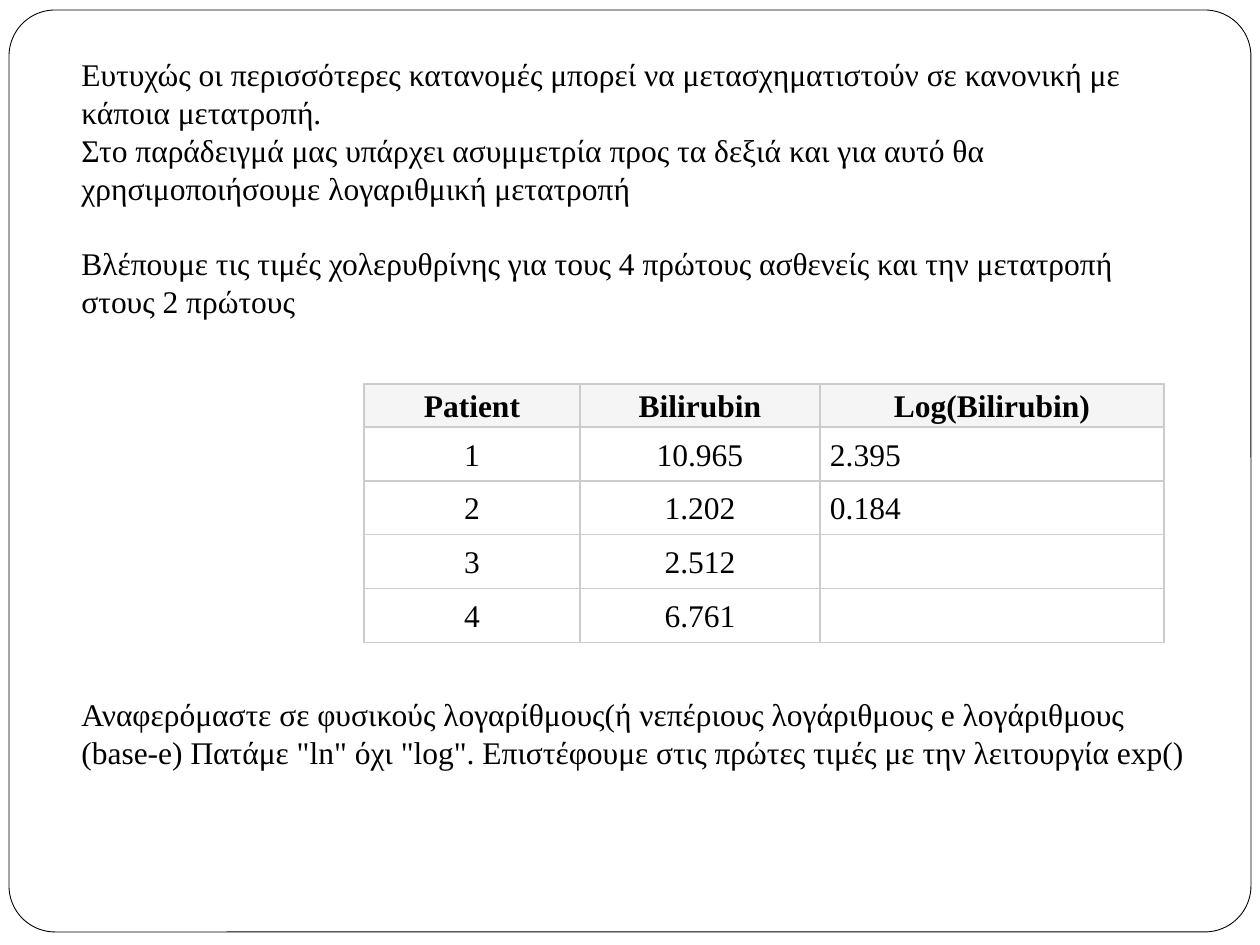
from lxml.etree import SubElement
from pptx import Presentation
from pptx.dml.color import RGBColor
from pptx.enum.shapes import MSO_SHAPE as Shape
from pptx.enum.text import PP_ALIGN as Align
from pptx.oxml.ns import qn
from pptx.util import Emu, Pt

EMU_PER_PX = 914400 / 126
FONT = "Times New Roman"
LINE_PITCH = 21.6

INTRO = [
    "Ευτυχώς οι περισσότερες κατανομές μπορεί να μετασχηματιστούν σε κανονική με κάποια μετατροπή.",
    "Στο παράδειγμά μας υπάρχει ασυμμετρία προς τα δεξιά και για αυτό θα "
    "χρησιμοποιήσουμε λογαριθμική μετατροπή",
]
TABLE_LEAD = ("Βλέπουμε τις τιμές χολερυθρίνης για τους 4 πρώτους ασθενείς "
              "και την μετατροπή στους 2 πρώτους")
LOG_NOTE = ("Αναφερόμαστε σε φυσικούς λογαρίθμους(ή νεπέριους λογάριθμους e λογάριθμους "
            "(base-e) Πατάμε \"ln\" όχι \"log\". Επιστέφουμε στις πρώτες τιμές με την "
            "λειτουργία exp()")
BILIRUBIN = [
    ("Patient", "Bilirubin", "Log(Bilirubin)"),
    ("1", "10.965", "2.395"),
    ("2", "1.202", "0.184"),
    ("3", "2.512", ""),
    ("4", "6.761", ""),
]


def px(length):
    return Emu(round(length * EMU_PER_PX))


def color(hex_code):
    return RGBColor.from_string(hex_code)


def write(paragraph, text, size=18, bold=False, align=Align.LEFT, ink="000000", before=0):
    paragraph.alignment = align
    paragraph.line_spacing = Pt(LINE_PITCH)
    paragraph.space_before = Pt(before)
    font = paragraph.font
    if text:
        run = paragraph.add_run()
        run.text = text
        font = run.font
    font.name, font.size, font.bold = FONT, Pt(size), bold
    font.color.rgb = color(ink)


def add_frame(slide, left, top, width, height):
    frame = slide.shapes.add_shape(Shape.ROUNDED_RECTANGLE, *map(px, (left, top, width, height)))
    frame.adjustments[0] = 0.05
    frame.shadow.inherit = False
    frame.fill.solid()
    frame.fill.fore_color.rgb = color("FFFFFF")
    frame.line.color.rgb = color("000000")
    frame.line.width = Pt(0.5)


def add_prose(slide, left, top, width, height, passages):
    """Place (text, points of space before) passages in one wrapped box."""
    prose = slide.shapes.add_textbox(*map(px, (left, top, width, height))).text_frame
    prose.word_wrap = True
    for index, (text, before) in enumerate(passages):
        paragraph = prose.add_paragraph() if index else prose.paragraphs[0]
        write(paragraph, text, before=before)


def set_borders(cell, hex_code, width):
    properties = cell._tc.get_or_add_tcPr()
    for index, side in enumerate(("a:lnL", "a:lnR", "a:lnT", "a:lnB")):
        border = SubElement(properties, qn(side), w=str(Pt(width)))
        properties.insert(index, border)
        fill = SubElement(border, qn("a:solidFill"))
        SubElement(fill, qn("a:srgbClr"), val=hex_code)


def add_bilirubin_table(slide, left, top, column_widths, header_height, row_height):
    heights = [header_height] + [row_height] * (len(BILIRUBIN) - 1)
    box = (left, top, sum(column_widths), sum(heights))
    table = slide.shapes.add_table(len(heights), len(column_widths), *map(px, box)).table
    for column, width in zip(table.columns, column_widths):
        column.width = px(width)
    for r, values in enumerate(BILIRUBIN):
        table.rows[r].height = px(heights[r])
        header = r == 0
        inset_x, inset_y = (2, 2) if header else (10, 8)
        for c, value in enumerate(values):
            cell = table.cell(r, c)
            cell.margin_left = cell.margin_right = px(inset_x)
            cell.margin_top = cell.margin_bottom = px(inset_y)
            cell.fill.solid()
            cell.fill.fore_color.rgb = color("F5F5F5" if header else "FFFFFF")
            set_borders(cell, "CCCCCC", 0.75)
            write(cell.text_frame.paragraphs[0], value, bold=header,
                  align=Align.CENTER if header or c < 2 else Align.LEFT)


def main():
    deck = Presentation()
    deck.slide_width, deck.slide_height = px(1260), px(945)
    slide = deck.slides.add_slide(deck.slide_layouts[6])
    add_frame(slide, 9, 10, 1242, 922)
    passages = [(text, 0) for text in INTRO] + [(TABLE_LEAD, LINE_PITCH)]
    add_prose(slide, 69, 49, 1113, 318, passages)
    add_bilirubin_table(slide, 364, 384, (216, 240, 344), 43, 54)
    add_prose(slide, 69, 689, 1152, 127, [(LOG_NOTE, 0)])
    deck.save("out.pptx")


if __name__ == "__main__":
    main()
